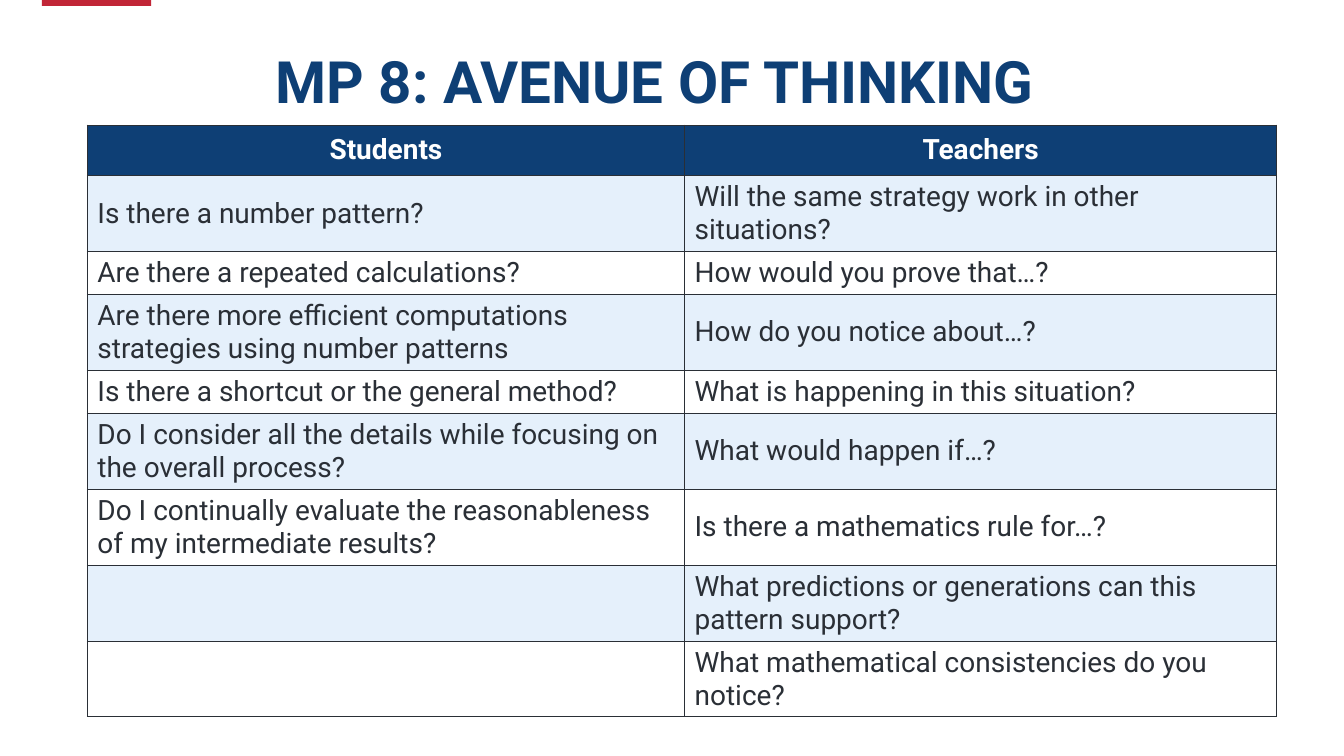
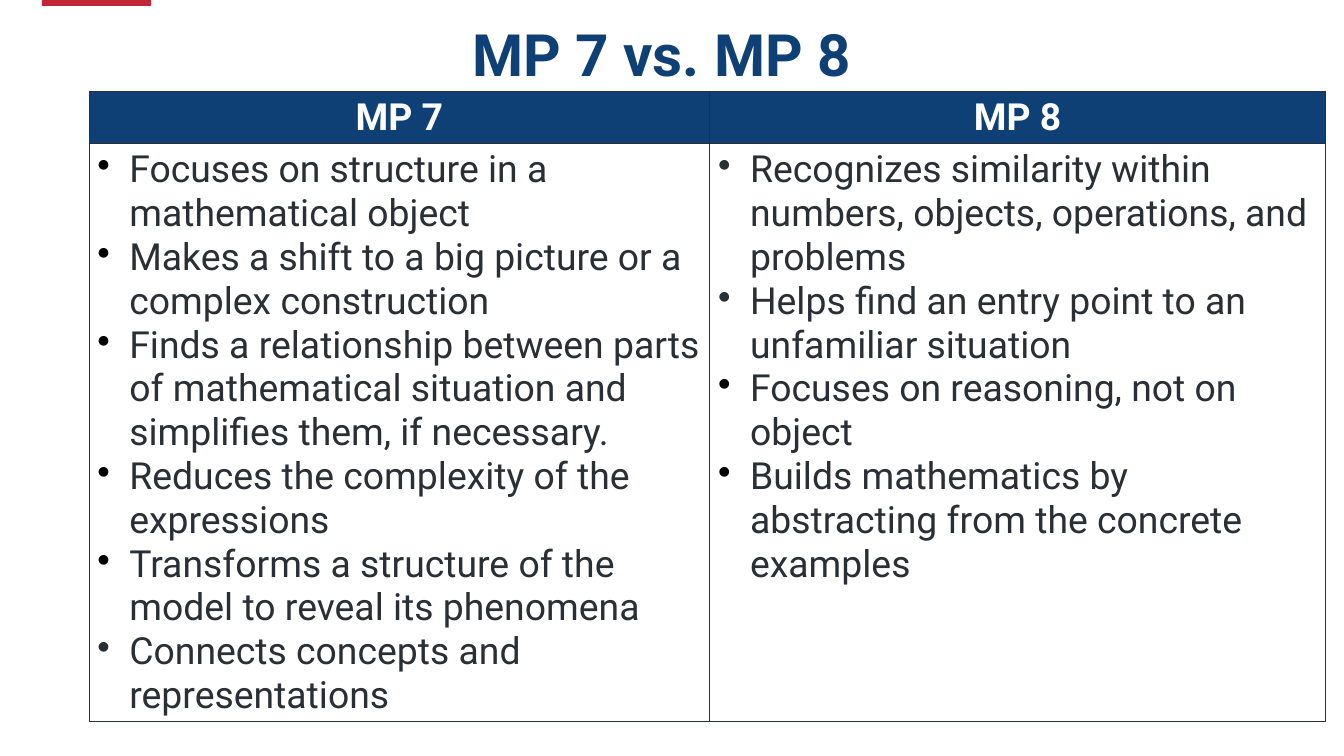
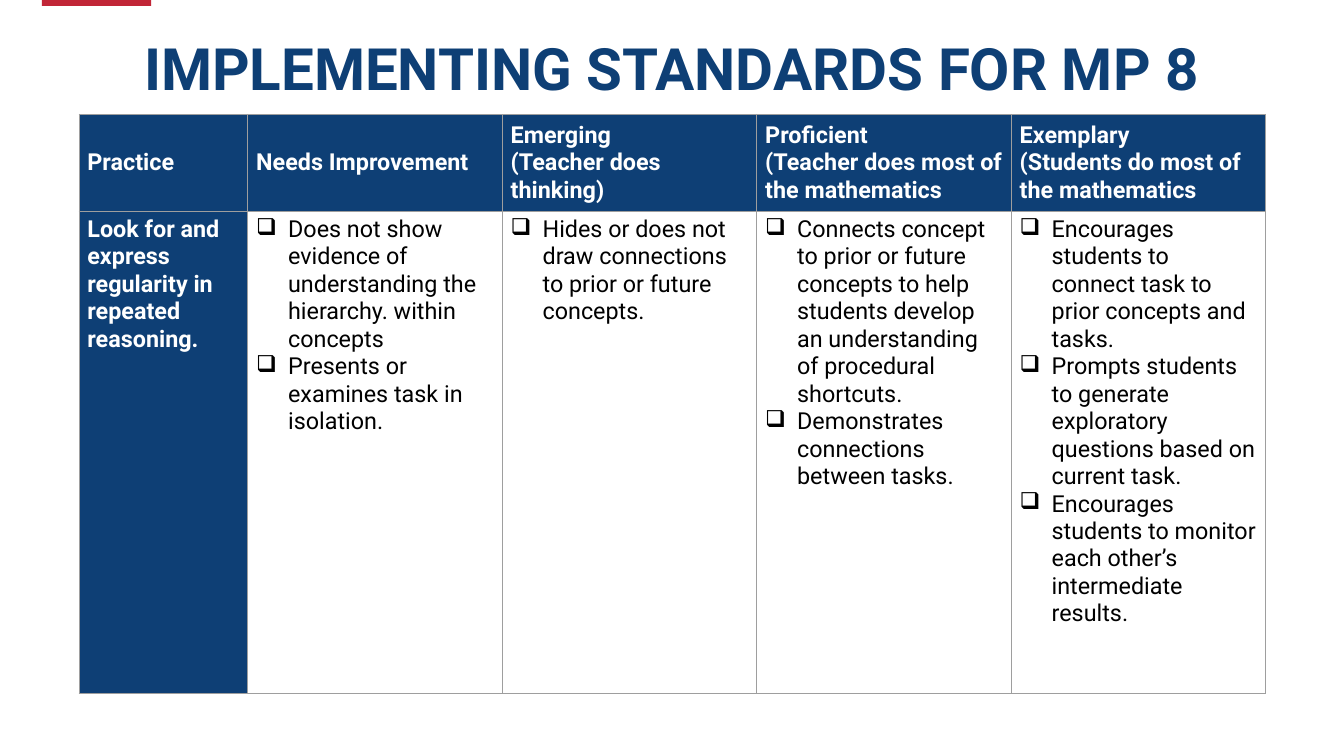
from dataclasses import dataclass

from lxml import etree
from pptx import Presentation
from pptx import util as u
from pptx.dml.color import RGBColor
from pptx.enum import shapes, text
from pptx.oxml import ns

COLORS = {
    "navy": "0E3F75",
    "red": "C12637",
    "sky": "81B5EF",
    "ink": "2A2F36",
    "gray": "9E9E9E",
    "black": "000000",
    "white": "FFFFFF",
}
FONT = "Roboto"
WIDTH, HEIGHT = u.Inches(16), u.Inches(9)
COLUMN, ROW = WIDTH / 16, HEIGHT / 9
TITLE_SIZE = 50
INDENT = u.Inches(0.38)
BAND_ALPHA = 20
TITLE_ONLY = 5
ALIGN, ANCHOR = text.PP_ALIGN, text.MSO_ANCHOR


@dataclass(frozen=True)
class Box:
    left: float
    top: float
    width: float
    height: float

    def lengths(self) -> tuple[int, int, int, int]:
        return (cols(self.left), rows(self.top), cols(self.width), rows(self.height))


@dataclass(frozen=True)
class Point:
    text: str
    mark_color: str = "black"


Content = str | tuple[Point, ...]


@dataclass(frozen=True)
class Sheet:
    title: str
    title_box: Box
    left: float
    top: float
    col_widths: tuple[float, ...]
    row_heights: tuple[float, ...]
    cells: tuple[tuple[Content, ...], ...]
    size: int
    border: str = "ink"
    border_width: float = 1
    body_color: str = "ink"
    header_align: ALIGN = ALIGN.CENTER
    body_anchor: ANCHOR = ANCHOR.TOP
    margins: tuple[float, float] = (0.1, 0.05)
    mark: str = "•"
    banded: bool = False
    row_headers: bool = False

    def is_header(self, row: int, col: int) -> bool:
        return row == 0 or (self.row_headers and col == 0)


def cols(n: float) -> int:
    return round(n * COLUMN)


def rows(n: float) -> int:
    return round(n * ROW)


def rgb(name: str) -> RGBColor:
    return RGBColor.from_string(COLORS[name])


def add_color(parent, name: str):
    return etree.SubElement(parent, ns.qn("a:srgbClr"), val=COLORS[name])


def style_font(p, size: int, color: str, bold: bool) -> None:
    p.font.name = FONT
    p.font.size = u.Pt(size)
    p.font.bold = bold
    p.font.color.rgb = rgb(color)


def add_bullet(p, mark: str, color: str) -> None:
    props = p._p.get_or_add_pPr()
    props.set("marL", str(INDENT))
    props.set("indent", str(-INDENT))
    add_color(etree.SubElement(props, ns.qn("a:buClr")), color)
    etree.SubElement(props, ns.qn("a:buChar"), char=mark)


def add_borders(cell, color: str, width: float) -> None:
    props = cell._tc.get_or_add_tcPr()
    for side in ("lnL", "lnR", "lnT", "lnB"):
        line = etree.SubElement(props, ns.qn(f"a:{side}"), w=str(u.Pt(width)))
        add_color(etree.SubElement(line, ns.qn("a:solidFill")), color)


def fill_cell(cell, color: str, alpha: int = 100) -> None:
    cell.fill.solid()
    cell.fill.fore_color.rgb = rgb(color)
    if alpha < 100:
        value = cell._tc.tcPr.find(".//" + ns.qn("a:solidFill") + "[last()]/" + ns.qn("a:srgbClr"))
        for fill in cell._tc.tcPr.findall(ns.qn("a:solidFill")):
            value = fill.find(ns.qn("a:srgbClr"))
        etree.SubElement(value, ns.qn("a:alpha"), val=str(alpha * 1000))


def write_cell(cell, content: Content, sheet: Sheet, header: bool) -> None:
    points = (content,) if isinstance(content, str) else content
    tf = cell.text_frame
    for i, point in enumerate(points):
        p = tf.paragraphs[0] if i == 0 else tf.add_paragraph()
        if isinstance(point, Point):
            p.text = point.text
            add_bullet(p, sheet.mark, point.mark_color)
        else:
            p.text = point
        style_font(p, sheet.size, "white" if header else sheet.body_color, header)


def add_sheet_table(s, sheet: Sheet) -> None:
    box = Box(sheet.left, sheet.top, sum(sheet.col_widths), sum(sheet.row_heights))
    frame = s.shapes.add_table(len(sheet.row_heights), len(sheet.col_widths), *box.lengths())
    table = frame.table
    table.first_row = table.horz_banding = False
    for column, width in zip(table.columns, sheet.col_widths):
        column.width = cols(width)
    for row, height in zip(table.rows, sheet.row_heights):
        row.height = rows(height)
    for r, contents in enumerate(sheet.cells):
        for c, content in enumerate(contents):
            cell = table.cell(r, c)
            header = sheet.is_header(r, c)
            write_cell(cell, content, sheet, header)
            cell.margin_left = cell.margin_right = u.Inches(sheet.margins[0])
            cell.margin_top = cell.margin_bottom = u.Inches(sheet.margins[1])
            cell.vertical_anchor = ANCHOR.MIDDLE if r == 0 else sheet.body_anchor
            if r == 0:
                cell.text_frame.paragraphs[0].alignment = sheet.header_align
            add_borders(cell, sheet.border, sheet.border_width)
            if header:
                fill_cell(cell, "navy")
            elif sheet.banded and r % 2:
                fill_cell(cell, "sky", BAND_ALPHA)
            else:
                cell.fill.background()


def add_accent(s) -> None:
    sp = s.shapes.add_shape(shapes.MSO_SHAPE.RECTANGLE, *Box(0.5, 0, 1.3, 0.07).lengths())
    sp.shadow.inherit = False
    sp.fill.solid()
    sp.fill.fore_color.rgb = rgb("red")
    sp.line.fill.background()


def set_title(s, title: str, box: Box) -> None:
    sp = s.shapes.title
    sp.left, sp.top, sp.width, sp.height = box.lengths()
    tf = sp.text_frame
    tf.auto_size = text.MSO_AUTO_SIZE.NONE
    tf.word_wrap = True
    tf.vertical_anchor = ANCHOR.TOP
    tf.margin_left = tf.margin_right = u.Inches(0.12)
    tf.margin_top = tf.margin_bottom = u.Inches(0.06)
    p = tf.paragraphs[0]
    p.text = title
    p.alignment = ALIGN.CENTER
    p.line_spacing = 0.9
    style_font(p, TITLE_SIZE, "navy", True)


def add_slide(prs, sheet: Sheet) -> None:
    s = prs.slides.add_slide(prs.slide_layouts[TITLE_ONLY])
    add_accent(s)
    set_title(s, sheet.title, sheet.title_box)
    add_sheet_table(s, sheet)


SHEETS = (
    Sheet(
        title="MP 8: AVENUE OF THINKING",
        title_box=Box(0.4, 0.57, 14.8, 1.18),
        left=1.04,
        top=1.49,
        col_widths=(7.11, 7.05),
        row_heights=(0.6, 0.59, 0.49, 0.87, 0.49, 0.87, 0.87, 0.87, 0.87),
        size=24,
        body_anchor=ANCHOR.MIDDLE,
        margins=(0.12, 0.06),
        banded=True,
        cells=(
            ("Students", "Teachers"),
            ("Is there a number pattern?", "Will the same strategy work in other situations?"),
            ("Are there a repeated calculations?", "How would you prove that…?"),
            (
                "Are there more efficient computations strategies using number patterns",
                "How do you notice about…?",
            ),
            ("Is there a shortcut or the general method?", "What is happening in this situation?"),
            (
                "Do I consider all the details while focusing on the overall process?",
                "What would happen if…?",
            ),
            (
                "Do I continually evaluate the reasonableness of my intermediate results?",
                "Is there a mathematics rule for…?",
            ),
            ("", "What predictions or generations can this pattern support?"),
            ("", "What mathematical consistencies do you notice?"),
        ),
    ),
    Sheet(
        title="MP 7 vs. MP 8",
        title_box=Box(2.48, 0.25, 10.8, 0.84),
        left=1.06,
        top=1.09,
        col_widths=(7.39, 7.33),
        row_heights=(0.6, 6.68),
        size=32,
        cells=(
            ("MP 7", "MP 8"),
            (
                (
                    Point("Focuses on structure in a mathematical object"),
                    Point("Makes a shift to a big picture or a complex construction"),
                    Point(
                        "Finds a relationship between parts of mathematical situation "
                        "and simplifies them, if necessary."
                    ),
                    Point("Reduces the complexity of the expressions"),
                    Point("Transforms a structure of the model to reveal its phenomena"),
                    Point("Connects concepts and representations", "ink"),
                ),
                (
                    Point(
                        "Recognizes similarity within numbers, objects, operations, and problems",
                        "ink",
                    ),
                    Point("Helps find an entry point to an unfamiliar situation", "ink"),
                    Point("Focuses on reasoning, not on object"),
                    Point("Builds mathematics by abstracting from the concrete examples"),
                ),
            ),
        ),
    ),
    Sheet(
        title="IMPLEMENTING STANDARDS FOR MP 8",
        title_box=Box(1.23, 0.42, 13.54, 1.13),
        left=0.94,
        top=1.36,
        col_widths=(2.01,) + (3.03,) * 4,
        row_heights=(1.16, 5.74),
        size=20,
        border="gray",
        border_width=0.75,
        body_color="black",
        header_align=ALIGN.LEFT,
        mark="❑",
        row_headers=True,
        cells=(
            (
                "Practice",
                "Needs Improvement",
                "Emerging\n(Teacher does thinking)",
                "Proficient\n(Teacher does most of the mathematics",
                "Exemplary\n(Students do most of the mathematics",
            ),
            (
                "Look for and express regularity in repeated reasoning.",
                (
                    Point("Does not show evidence of understanding the hierarchy. within concepts"),
                    Point("Presents or examines task in isolation."),
                ),
                (Point("Hides or does not draw connections to prior or future concepts."),),
                (
                    Point(
                        "Connects concept to prior or future concepts to help students "
                        "develop an understanding of procedural shortcuts."
                    ),
                    Point("Demonstrates connections between tasks."),
                ),
                (
                    Point("Encourages students to connect task to prior concepts and tasks."),
                    Point("Prompts students to generate exploratory questions based on current task."),
                    Point("Encourages students to monitor each other’s intermediate results."),
                ),
            ),
        ),
    ),
)


def main() -> None:
    prs = Presentation()
    prs.slide_width, prs.slide_height = WIDTH, HEIGHT
    for sheet in SHEETS:
        add_slide(prs, sheet)
    prs.save("out.pptx")


if __name__ == "__main__":
    main()
